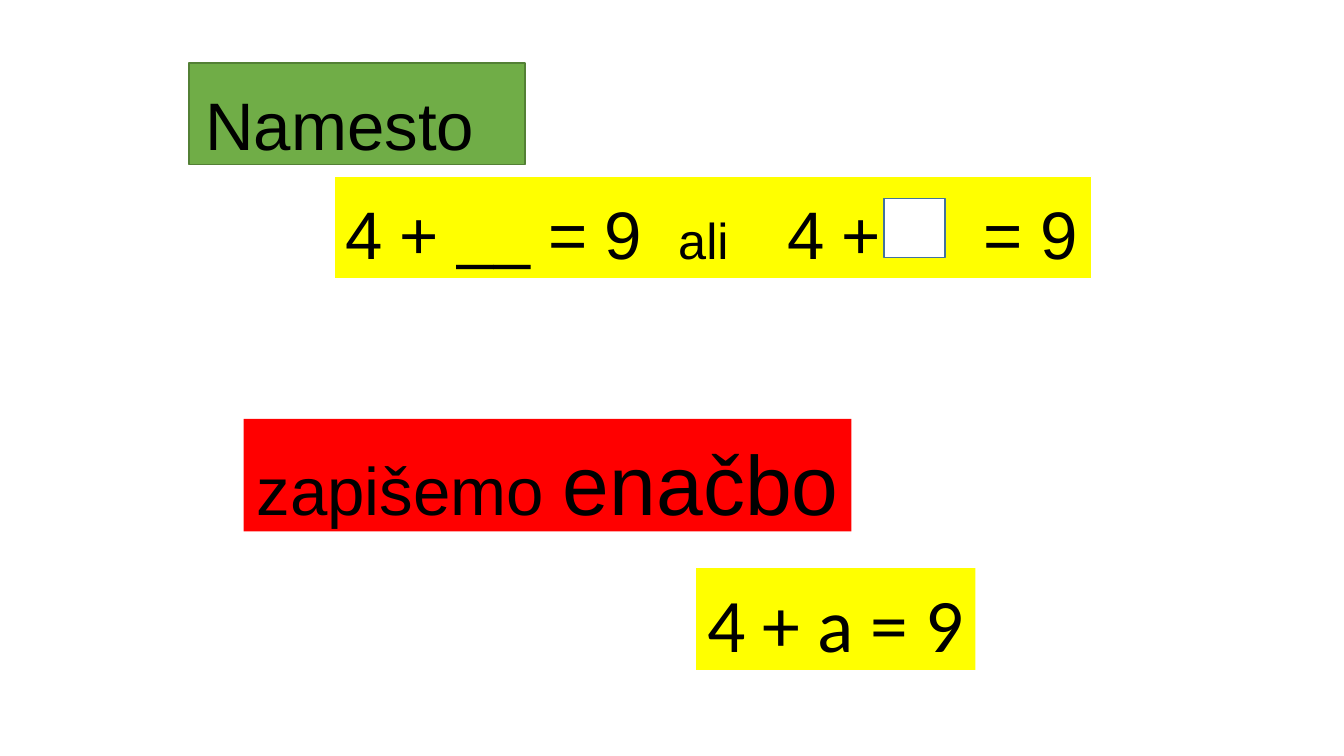
"""Build a slide that turns a fill-in sum into an equation with an unknown."""
import pptx
import pptx.util
import pptx.dml.color
import pptx.enum.shapes
import pptx.enum.text
import lxml.etree

PX = 9525
BLACK = pptx.dml.color.RGBColor(0x00, 0x00, 0x00)
WHITE = pptx.dml.color.RGBColor(0xFF, 0xFF, 0xFF)
GREEN = pptx.dml.color.RGBColor(0x70, 0xAD, 0x47)
DARK_GREEN = pptx.dml.color.RGBColor(0x53, 0x80, 0x35)
RED = pptx.dml.color.RGBColor(0xFF, 0x00, 0x00)
YELLOW = pptx.dml.color.RGBColor(0xFF, 0xFF, 0x00)
BLUE = pptx.dml.color.RGBColor(0x43, 0x73, 0x9E)

SYMBOL = ("Arial", 48)
GAP = ("Calibri", 54)
WORD = ("Arial", 36)
EMPHASIS = ("Arial", 60)


def add_box(shapes, bounds, fill, line=None, line_width=1):
    """Add a flat rectangle and return it."""
    box = shapes.add_shape(pptx.enum.shapes.MSO_SHAPE.RECTANGLE,
                           *(length * PX for length in bounds))
    box.shadow.inherit = False
    box.fill.solid()
    box.fill.fore_color.rgb = fill
    if line is None:
        box.line.fill.background()
    else:
        box.line.color.rgb = line
        box.line.width = pptx.util.Pt(line_width)
    return box


def write_line(box, pieces, top, right=10, wrap=True, tabs=()):
    """Write one line of (text, style) pieces, with left tab stops if given."""
    frame = box.text_frame
    frame.word_wrap = wrap
    frame.vertical_anchor = pptx.enum.text.MSO_ANCHOR.TOP
    frame.margin_top, frame.margin_bottom = top * PX, 0
    frame.margin_left, frame.margin_right = 10 * PX, right * PX
    line = frame.paragraphs[0]
    alignments = pptx.enum.text.PP_ALIGN
    line.alignment = alignments.LEFT if tabs else alignments.CENTER
    if tabs:
        namespace = "{http://schemas.openxmlformats.org/drawingml/2006/main}"
        stops = lxml.etree.SubElement(line._p.get_or_add_pPr(), namespace + "tabLst")
        for position in tabs:
            lxml.etree.SubElement(stops, namespace + "tab",
                                  pos=str(position * PX), algn="l")
    for text, (font, size) in pieces:
        run = line.add_run()
        run.text = text
        run.font.name = font
        run.font.size = pptx.util.Pt(size)
        run.font.color.rgb = BLACK


def main():
    """Build and save the slide."""
    deck = pptx.Presentation()
    deck.slide_width, deck.slide_height = 1280 * PX, 720 * PX
    slide = deck.slides.add_slide(deck.slide_layouts[6])

    instead = add_box(slide.shapes, (180, 60, 320, 97), GREEN, DARK_GREEN)
    write_line(instead, [("Namesto", SYMBOL)], top=19, right=43)

    we_write = add_box(slide.shapes, (232, 399, 579, 107), RED)
    write_line(we_write, [("zapišemo ", SYMBOL), ("enačbo", EMPHASIS)],
               top=12, wrap=False)

    equation = add_box(slide.shapes, (663, 541, 266, 97), YELLOW)
    write_line(equation, [("4 + a = 9", GAP)], top=8, wrap=False)

    sums = slide.shapes.add_group_shape().shapes
    fill_in = add_box(sums, (319, 168, 721, 97), YELLOW, WHITE, 0.75)
    result = [("=", SYMBOL), (" ", GAP), ("9", SYMBOL)]
    addition = [("4", SYMBOL), (" ", GAP), ("+", SYMBOL)]
    write_line(fill_in,
               addition + [(" __ ", GAP)] + result
               + [("\tali\t", WORD)] + addition + [("\t", GAP)] + result,
               top=7, right=0, tabs=(317, 421, 608))
    add_box(sums, (842, 189, 58, 56), WHITE, BLUE)

    deck.save("out.pptx")


if __name__ == "__main__":
    main()
